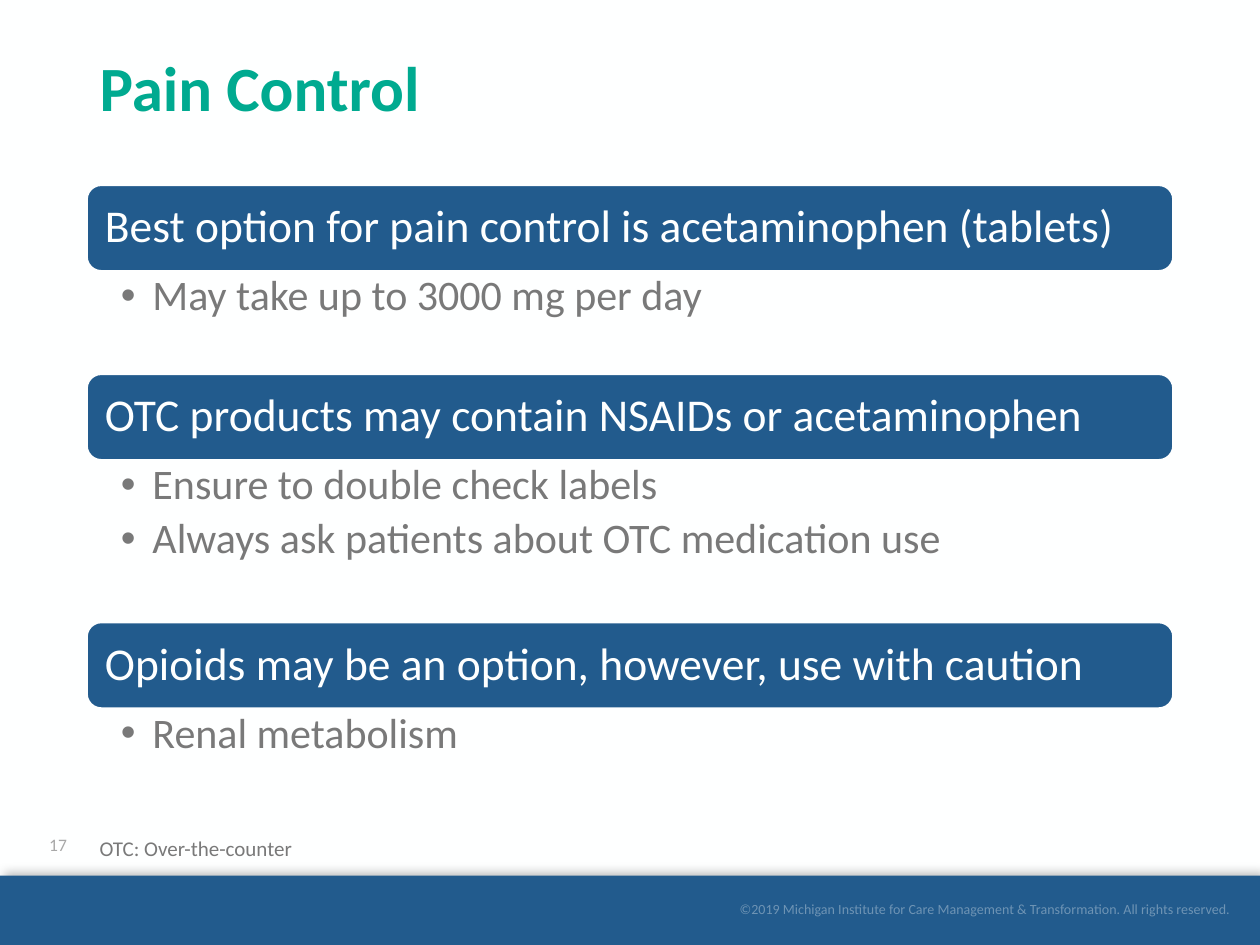
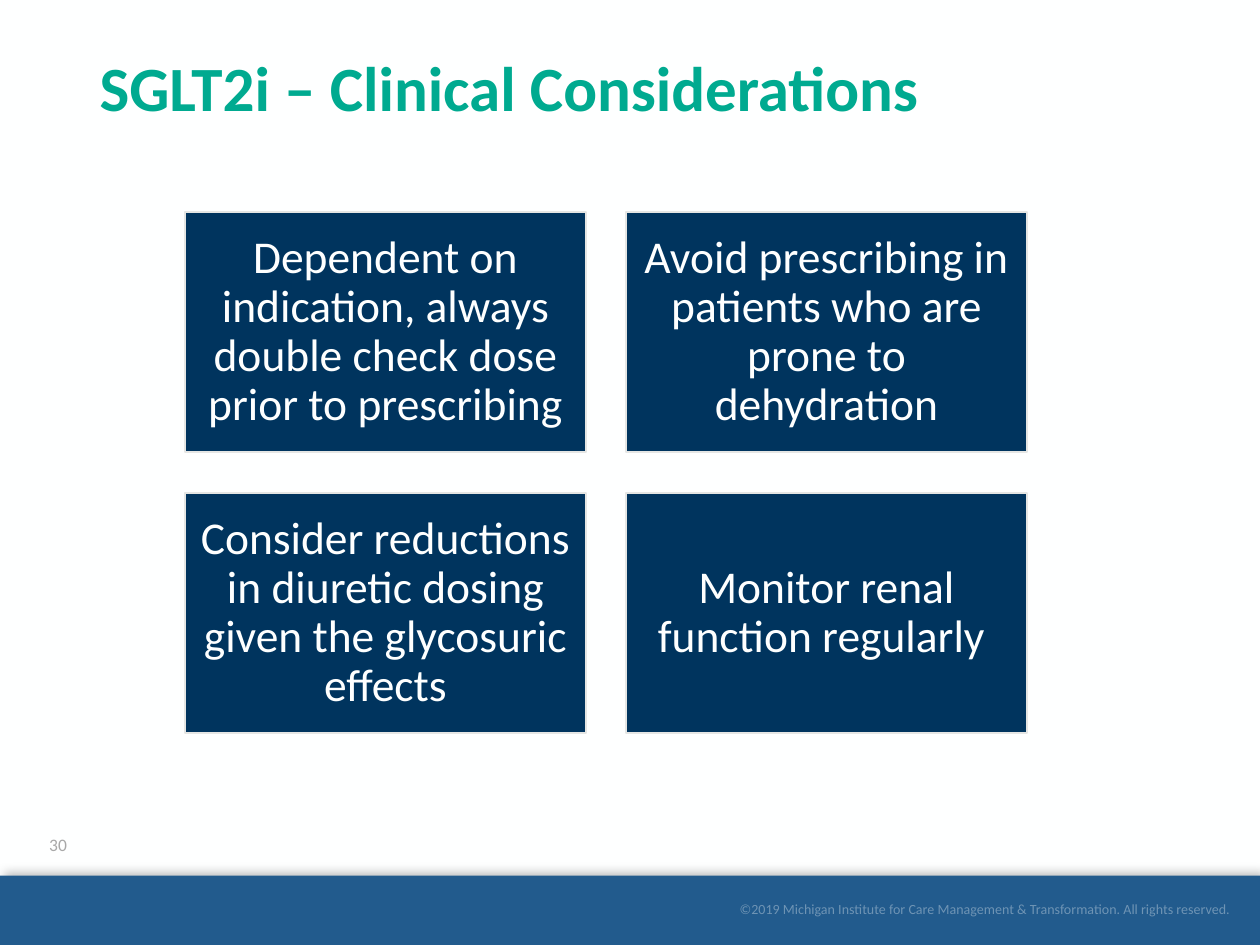
from typing import NamedTuple

from lxml.etree import SubElement
from pptx import Presentation
from pptx.dml.color import RGBColor
from pptx.enum.shapes import MSO_SHAPE as Preset
from pptx.enum.text import MSO_ANCHOR as Anchor, MSO_AUTO_SIZE as AutoSize, PP_ALIGN as Align
from pptx.oxml.ns import qn
from pptx.util import Inches, Pt

SLIDE_WIDTH, SLIDE_HEIGHT = Inches(10), Inches(7.5)
COLUMN, ROW = SLIDE_WIDTH / 100, SLIDE_HEIGHT / 75
TITLE_ONLY, COMPARISON = 5, 4

WHITE = RGBColor(0xFE, 0xFF, 0xFF)
TEAL = RGBColor(0x00, 0xAA, 0x90)
BLUE = RGBColor(0x22, 0x5B, 0x8D)
NAVY = RGBColor(0x00, 0x34, 0x5E)
BORDER = RGBColor(0xE5, 0xE6, 0xE4)
GREY = RGBColor(0x79, 0x79, 0x79)
PALE_GREY = RGBColor(0xA8, 0xA8, 0xA8)

FONT = "Calibri"
COPYRIGHT = "©2019 Michigan Institute for Care Management & Transformation. All rights reserved."

PAIN_SECTIONS = [
    ("Best option for pain control is acetaminophen (tablets)",
     ["May take up to 3000 mg per day"], 8.2),
    ("OTC products may contain NSAIDs or acetaminophen",
     ["Ensure to double check labels", "Always ask patients about OTC medication use"], 12.9),
    ("Opioids may be an option, however, use with caution",
     ["Renal metabolism"], 4.7),
]
CONSIDERATIONS = [
    "Dependent on indication, always double check dose prior to prescribing",
    "Avoid prescribing in patients who are prone to dehydration",
    "Consider reductions in diuretic dosing given the glycosuric effects",
    "Monitor renal function regularly ",
]


class Box(NamedTuple):
    """An area in columns and rows of the slide grid."""
    left: float
    top: float
    width: float
    height: float

    def lengths(self):
        """Return left, top, width and height as slide lengths."""
        return (round(self.left * COLUMN), round(self.top * ROW),
                round(self.width * COLUMN), round(self.height * ROW))


TITLE_BOX = Box(6.9, 4, 86.2, 14.5)
BAND_BOX = Box(0, 69.5, 100, 5.5)
NUMBER_BOX = Box(2.5, 65, 4.2, 4)
SECTIONS_BOX = Box(6.9, 14.7, 86.2, 46.4)
NOTE_BOX = Box(6.9, 65.8, 67.5, 3)
TILES_BOX = Box(14.7, 16.8, 66.8, 41.4)


def write(part, lines, size, color, align=Align.LEFT, anchor=Anchor.MIDDLE,
          margins=(1, 0.5, 1, 0.5), bold=False, spacing=0.9, after=0):
    """Fill a part with formatted lines; margins are in grid columns."""
    frame = part.text_frame
    frame.text = "\n".join(lines)
    frame.word_wrap, frame.auto_size = True, AutoSize.NONE
    frame.vertical_anchor = anchor
    (frame.margin_left, frame.margin_top,
     frame.margin_right, frame.margin_bottom) = (round(m * COLUMN) for m in margins)
    for paragraph in frame.paragraphs:
        paragraph.alignment, paragraph.line_spacing = align, spacing
        paragraph.space_before, paragraph.space_after = Pt(0), Pt(after)
        for run in paragraph.runs:
            run.font.name, run.font.size, run.font.bold = FONT, Pt(size), bold
            run.font.color.rgb = color


def add_panel(slide, preset, box, fill, border=None):
    """Draw a filled shape, with a thin border if one is given."""
    panel = slide.shapes.add_shape(preset, *box.lengths())
    panel.shadow.inherit = False
    panel.fill.solid()
    panel.fill.fore_color.rgb = fill
    if border is None:
        panel.line.fill.background()
    else:
        panel.line.color.rgb, panel.line.width = border, Pt(1)
    return panel


def move(placeholder, box):
    """Move a placeholder into a box."""
    (placeholder.left, placeholder.top,
     placeholder.width, placeholder.height) = box.lengths()


def set_alpha(color_element, percent):
    """Make a colour partly transparent."""
    SubElement(color_element, qn("a:alpha"), val=str(percent * 1000))


def add_footer(slide, box, number):
    """Draw the shadowed band with its copyright line, and the slide number."""
    band = add_panel(slide, Preset.RECTANGLE, box, BLUE)
    effects = band._element.spPr.find(qn("a:effectLst"))
    shadow = SubElement(effects, qn("a:outerShdw"), blurRad=str(Pt(6)), dist=str(Pt(3)),
                        dir=str(315 * 60000), algn="bl", rotWithShape="0")
    set_alpha(SubElement(shadow, qn("a:srgbClr"), val="000000"), 25)

    copyright_box = Box(box.left + 49.5, box.top + 1.3, 48.2, 2.7)
    copyright_line = slide.shapes.add_textbox(*copyright_box.lengths())
    write(copyright_line, [COPYRIGHT], 8, WHITE, Align.RIGHT,
          margins=(1, 0.5, 0, 0.5), spacing=1)
    for color in copyright_line._element.iter(qn("a:srgbClr")):
        set_alpha(color, 35)

    page_number = slide.shapes.add_textbox(*NUMBER_BOX.lengths())
    write(page_number, [str(number)], 10, PALE_GREY, Align.CENTER,
          margins=(0, 0.5, 0, 0.5), spacing=1)


def start_slide(deck, layout, title, number):
    """Add a slide with the shared background, title and footer."""
    slide = deck.slides.add_slide(deck.slide_layouts[layout])
    move(slide.shapes.title, TITLE_BOX)
    write(slide.shapes.title, [title], 36, TEAL, anchor=Anchor.TOP, bold=True)
    add_footer(slide, BAND_BOX, number)
    return slide


def fill_bullets(bullets, box, items):
    """Place a bullet list in a box."""
    move(bullets, box)
    write(bullets, items, 24, GREY, anchor=Anchor.TOP,
          margins=(2.7, 0.3, 1.9, 0.3), after=4.8)
    for paragraph in bullets.text_frame.paragraphs:
        properties = paragraph._p.get_or_add_pPr()
        properties.set("marL", str(Inches(0.25)))
        properties.set("indent", str(-Inches(0.25)))
        SubElement(properties, qn("a:buFont"), typeface="Arial")
        SubElement(properties, qn("a:buChar"), char="•")


def add_sections(slide, box, sections, lists):
    """Stack heading bars, each followed by its bullet list."""
    bar_height, top = 6.8, box.top
    for (heading, items, list_height), bullets in zip(sections, lists):
        bar = add_panel(slide, Preset.ROUNDED_RECTANGLE,
                        Box(box.left, top, box.width, bar_height), BLUE, WHITE)
        write(bar, [heading], 26, WHITE, margins=(1.1,) * 4)
        top += bar_height
        fill_bullets(bullets, Box(box.left, top, box.width, list_height), items)
        top += list_height


def add_tiles(slide, box, texts, gap=3.2, columns=2):
    """Lay texts out as equal tiles with equal gaps."""
    rows = len(texts) // columns
    width = (box.width - gap * (columns - 1)) / columns
    height = (box.height - gap * (rows - 1)) / rows
    for index, text in enumerate(texts):
        row, column = divmod(index, columns)
        tile_box = Box(box.left + column * (width + gap),
                       box.top + row * (height + gap), width, height)
        tile = add_panel(slide, Preset.RECTANGLE, tile_box, NAVY, BORDER)
        write(tile, [text], 26, WHITE, Align.CENTER, margins=(1.1,) * 4)


def build_pain_control(deck):
    """Build the slide of pain control options."""
    slide = start_slide(deck, COMPARISON, "Pain Control", 17)
    _, note, *lists = slide.placeholders
    add_sections(slide, SECTIONS_BOX, PAIN_SECTIONS, lists)
    move(note, NOTE_BOX)
    write(note, ["OTC: Over-the-counter"], 12, GREY, anchor=Anchor.TOP, spacing=1)


def build_considerations(deck):
    """Build the slide of clinical considerations."""
    slide = start_slide(deck, TITLE_ONLY, "SGLT2i – Clinical Considerations", 30)
    add_tiles(slide, TILES_BOX, CONSIDERATIONS)


def main():
    """Build and save the presentation."""
    deck = Presentation()
    deck.slide_width, deck.slide_height = SLIDE_WIDTH, SLIDE_HEIGHT
    background = deck.slide_master.background.fill
    background.solid()
    background.fore_color.rgb = WHITE
    build_pain_control(deck)
    build_considerations(deck)
    deck.save("out.pptx")


if __name__ == "__main__":
    main()
